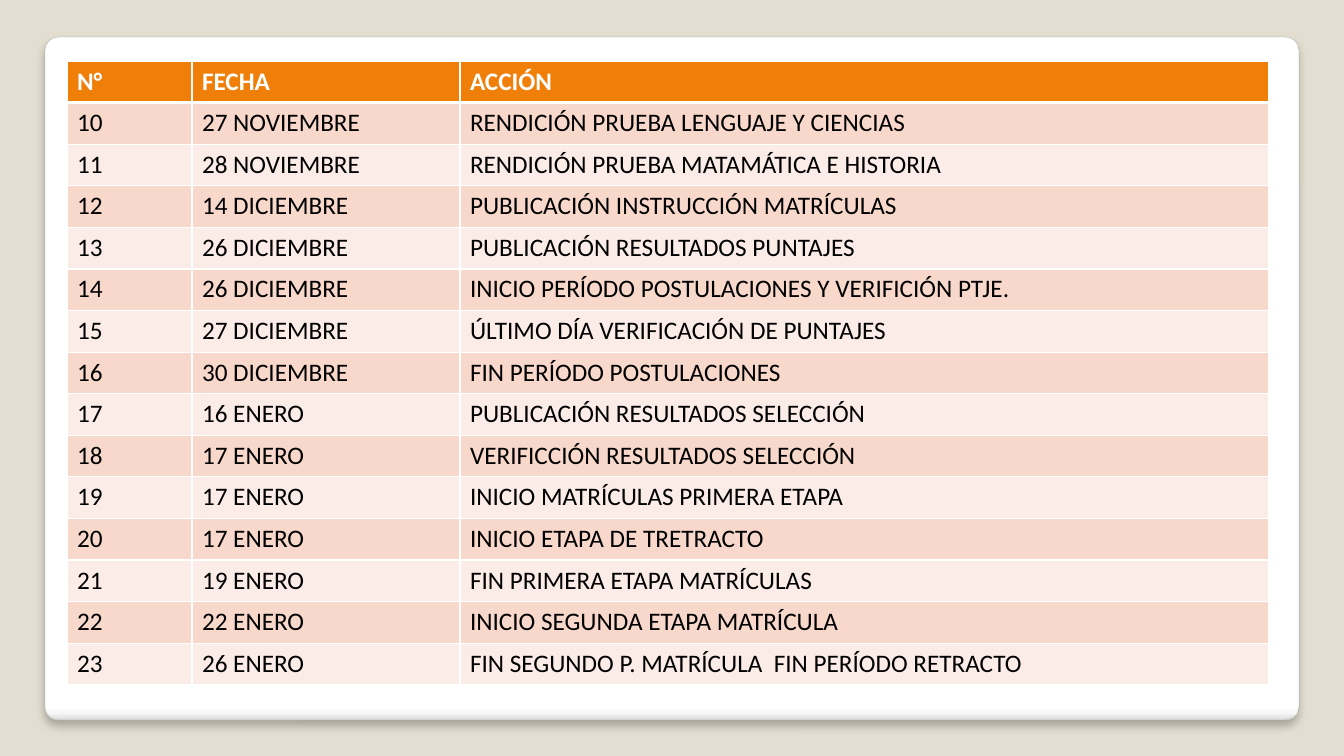
from lxml.etree import SubElement
from pptx import Presentation
from pptx.dml.color import RGBColor
from pptx.enum.shapes import MSO_SHAPE
from pptx.oxml import parse_xml
from pptx.oxml.ns import nsdecls, qn
from pptx.util import Emu, Pt

SAND = RGBColor(0xE3, 0xDE, 0xD1)
WHITE = RGBColor(0xFF, 0xFF, 0xFF)
BLACK = RGBColor(0, 0, 0)
GREY = RGBColor(0xA4, 0xA4, 0xA4)
PEARL = RGBColor(0xF7, 0xF7, 0xF7)
SILVER = RGBColor(0xDA, 0xDA, 0xDA)
ORANGE = RGBColor(0xF0, 0x7F, 0x09)
ROSE = RGBColor(0xF9, 0xD8, 0xCC)
BLUSH = RGBColor(0xFC, 0xEC, 0xE7)

FONT = "Calibri"
FIRST = 10
HEAD = ("N°", "FECHA", "ACCIÓN")
DATES = [
    ("27 NOVIEMBRE", "RENDICIÓN PRUEBA LENGUAJE Y CIENCIAS"),
    ("28 NOVIEMBRE", "RENDICIÓN PRUEBA MATAMÁTICA E HISTORIA"),
    ("14 DICIEMBRE", "PUBLICACIÓN INSTRUCCIÓN MATRÍCULAS"),
    ("26 DICIEMBRE", "PUBLICACIÓN RESULTADOS PUNTAJES"),
    ("26 DICIEMBRE", "INICIO PERÍODO POSTULACIONES Y VERIFICIÓN PTJE."),
    ("27 DICIEMBRE", "ÚLTIMO DÍA VERIFICACIÓN DE PUNTAJES"),
    ("30 DICIEMBRE", "FIN PERÍODO POSTULACIONES"),
    ("16 ENERO", "PUBLICACIÓN RESULTADOS SELECCIÓN"),
    ("17 ENERO", "VERIFICCIÓN RESULTADOS SELECCIÓN"),
    ("17 ENERO", "INICIO MATRÍCULAS PRIMERA ETAPA"),
    ("17 ENERO", "INICIO ETAPA DE TRETRACTO"),
    ("19 ENERO", "FIN PRIMERA ETAPA MATRÍCULAS"),
    ("22 ENERO", "INICIO SEGUNDA ETAPA MATRÍCULA"),
    ("26 ENERO", "FIN SEGUNDO P. MATRÍCULA  FIN PERÍODO RETRACTO"),
]


def px(n):
    return Emu(round(n * 914400 / 100.8))


def add_card(slide, box):
    card = slide.shapes.add_shape(MSO_SHAPE.ROUNDED_RECTANGLE, *map(px, box))
    card.adjustments[0] = 0.02
    card.line.color.rgb = GREY
    card.line.width = Pt(0.16)
    card.shadow.inherit = False
    props = card._element.spPr
    shade = SubElement(props.find(qn("a:effectLst")), qn("a:outerShdw"),
                       blurRad=str(Pt(6)), dist=str(Pt(4)),
                       dir="5400000", algn="t", rotWithShape="0")
    tint = SubElement(shade, qn("a:srgbClr"), val=str(BLACK))
    SubElement(tint, qn("a:alpha"), val="25000")
    stops = "".join(
        f'<a:gs pos="{pos * 1000}"><a:srgbClr val="{color}"/></a:gs>'
        for pos, color in ((0, WHITE), (98, WHITE), (99, PEARL), (100, SILVER)))
    props.find(qn("a:prstGeom")).addnext(parse_xml(
        f'<a:gradFill {nsdecls("a")} rotWithShape="1"><a:gsLst>{stops}'
        '</a:gsLst><a:lin ang="5400000" scaled="0"/></a:gradFill>'))


def set_edge(cell, side, width):
    edge = SubElement(cell._tc.get_or_add_tcPr(), qn(f"a:ln{side}"), w=str(Pt(width)))
    SubElement(SubElement(edge, qn("a:solidFill")), qn("a:srgbClr"), val=str(WHITE))


def add_dates(slide, box, widths):
    rows = [HEAD] + [(str(n), *row) for n, row in enumerate(DATES, FIRST)]
    table = slide.shapes.add_table(len(rows), len(HEAD), *map(px, box)).table
    for col, width in zip(table.columns, widths):
        col.width = px(width)
    for i, row in enumerate(rows):
        table.rows[i].height = px(box[3] / len(rows))
        top = i == 0
        for j, text in enumerate(row):
            cell = table.cell(i, j)
            for side in "LRTB":
                thick = (top and side == "B") or (i == 1 and side == "T")
                set_edge(cell, side, 3 if thick else 1)
            cell.fill.solid()
            cell.fill.fore_color.rgb = ORANGE if top else ROSE if i % 2 else BLUSH
            cell.text = text
            font = cell.text_frame.paragraphs[0].font
            font.name, font.size, font.bold = FONT, Pt(18), top
            font.color.rgb = WHITE if top else BLACK


def main():
    deck = Presentation()
    deck.slide_width, deck.slide_height = px(1344), px(756)
    slide = deck.slides.add_slide(deck.slide_layouts[6])
    slide.background.fill.solid()
    slide.background.fill.fore_color.rgb = SAND
    add_card(slide, (45, 37, 1254, 683))
    add_dates(slide, (67, 61, 1202, 624), (125, 268, 809))
    deck.save("out.pptx")


if __name__ == "__main__":
    main()
